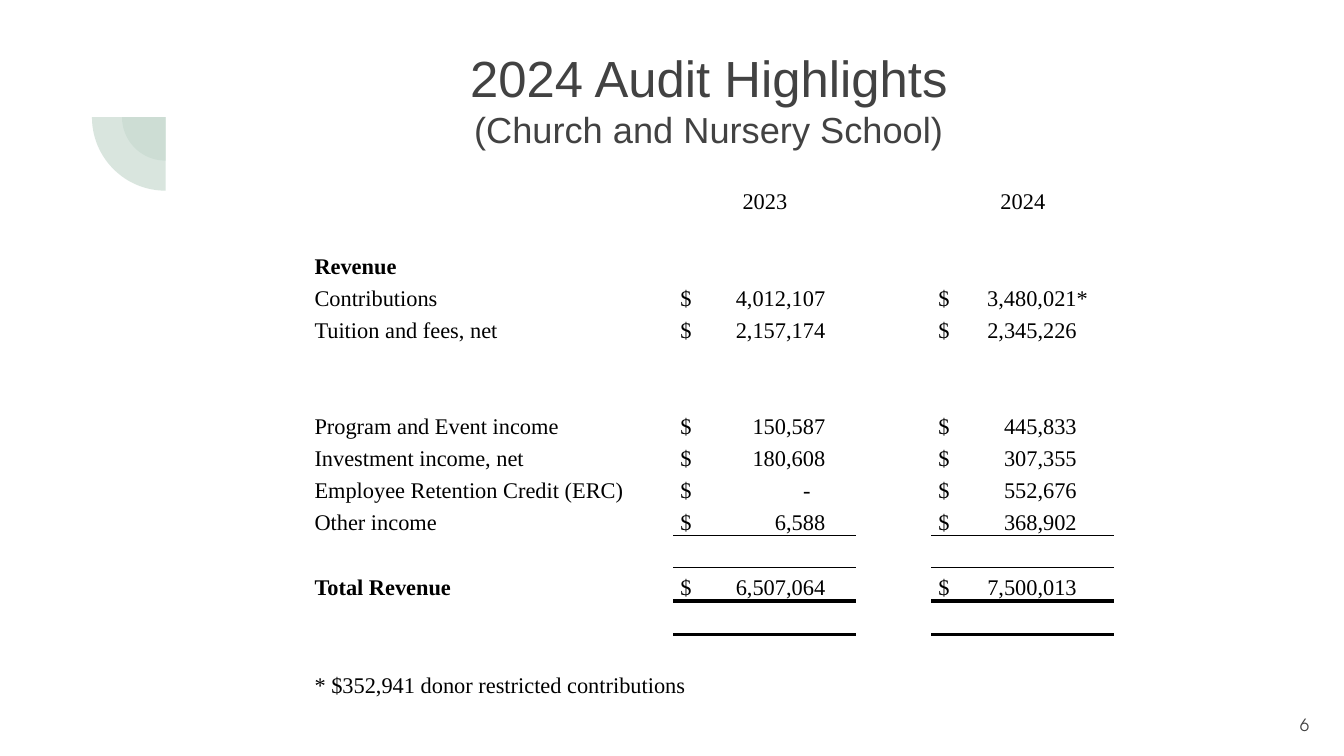
from math import cos, pi, sin

from lxml.etree import SubElement
from pptx import Presentation
from pptx.dml.color import RGBColor
from pptx.enum.text import MSO_ANCHOR, PP_ALIGN
from pptx.oxml import parse_xml
from pptx.oxml.ns import qn
from pptx.util import Pt

COLORS = {"text": "424242", "table": "000000", "accent": "C9DBD1"}
NS = 'xmlns:a="http://schemas.openxmlformats.org/drawingml/2006/main"'
PLAIN_STYLE = "{2D5ABB26-0587-4C30-8999-92F81FD0307C}"  # no style, no grid

COL_WIDTHS = [193, 98, 40.2, 98]
ROW_HEIGHT, TOTAL_HEIGHT = 17.2, 17.9
TAB_STOPS = {1: 77.7, 3: 74.2}  # right edge of the figures, by column
TAB_SHIFT = {"*": 6, "-": -8}  # a note mark hangs out, a dash sits in

# Row number: label, 2023, 2024
AMOUNTS = {
    3: ("Contributions", "4,012,107", "3,480,021*"),
    4: ("Tuition and fees, net", "2,157,174", "2,345,226"),
    7: ("Program and Event income", "150,587", "445,833"),
    8: ("Investment income, net", "180,608", "307,355"),
    9: ("Employee Retention Credit (ERC)", "-", "552,676"),
    10: ("Other income", "6,588", "368,902"),
    12: ("Total Revenue", "6,507,064", "7,500,013"),
}
ROW_COUNT, TOTAL_ROW, NOTE_ROW = 16, 12, 15
RULES = {10: 0.5, 12: 2}  # line width below a row


def rgb(name):
    return RGBColor.from_string(COLORS[name])


def add_run(p, text, font, size, color, bold=False):
    r = p.add_run()
    r.text = text
    r.font.name, r.font.size, r.font.bold = font, Pt(size), bold
    r.font.color.rgb = rgb(color)


def set_margins(tf, size):
    tf.margin_left = tf.margin_right = Pt(size)
    tf.margin_top = tf.margin_bottom = Pt(size)


def add_quarter_disc(s, right, top, radius):
    """Lower left quarter of a disc centred at (right, top)."""
    steps = 40
    angles = [pi / 2 * (1 + i / steps) for i in range(steps + 1)]
    arc = [(right + radius * cos(a), top + radius * sin(a)) for a in angles]
    builder = s.shapes.build_freeform(Pt(right), Pt(top))
    builder.add_line_segments([(Pt(x), Pt(y)) for x, y in arc], close=True)
    sp = builder.convert_to_shape()
    sp.shadow.inherit = False
    sp.line.fill.background()
    sp.fill.solid()
    sp.fill.fore_color.rgb = rgb("accent")
    SubElement(next(sp._element.iter(qn("a:srgbClr"))), qn("a:alpha"), val="70000")


def add_title(s):
    sp = s.shapes.title
    sp.left, sp.top, sp.width, sp.height = Pt(103), Pt(15.8), Pt(553.7), Pt(74.2)
    tf = sp.text_frame
    set_margins(tf, 7.2)
    tf.vertical_anchor = MSO_ANCHOR.MIDDLE
    p = tf.paragraphs[0]
    p.alignment = PP_ALIGN.CENTER
    add_run(p, "2024 Audit Highlights", "Arial", 27.2, "text")
    p.add_line_break()
    add_run(p, "(Church and Nursery School)", "Arial", 19.4, "text")


def write_cell(cell, text, bold=False, align=PP_ALIGN.LEFT):
    p = cell.text_frame.paragraphs[0]
    p.alignment = align
    add_run(p, text, "Times New Roman", 12, "table", bold)


def write_amount(cell, amount, stop):
    cell.margin_left = Pt(3.7)
    stop += TAB_SHIFT.get(amount[-1], 0)
    pPr = cell.text_frame.paragraphs[0]._p.get_or_add_pPr()
    tabs = SubElement(pPr, qn("a:tabLst"))
    SubElement(tabs, qn("a:tab"), pos=str(int(Pt(stop))), algn="r")
    write_cell(cell, "$\t" + amount)


def add_border(cell, side, width):
    cell._tc.get_or_add_tcPr().insert(0, parse_xml(
        f'<a:ln{side} {NS} w="{int(Pt(width))}"><a:solidFill>'
        f'<a:srgbClr val="{COLORS["table"]}"/></a:solidFill></a:ln{side}>'))


def add_revenue_table(s):
    frame = s.shapes.add_table(ROW_COUNT, len(COL_WIDTHS), Pt(167.8), Pt(97.9),
                               Pt(sum(COL_WIDTHS)), Pt(ROW_HEIGHT * ROW_COUNT))
    table = frame.table
    table.first_row = table.horz_banding = False
    next(frame._element.iter(qn("a:tableStyleId"))).text = PLAIN_STYLE
    for col, width in zip(table.columns, COL_WIDTHS):
        col.width = Pt(width)
    for i, row in enumerate(table.rows):
        row.height = Pt(TOTAL_HEIGHT if i in (TOTAL_ROW, TOTAL_ROW + 1) else ROW_HEIGHT)
        for cell in row.cells:
            cell.margin_left = cell.margin_right = cell.margin_top = Pt(0.7)
            cell.margin_bottom = Pt(0)
            cell.vertical_anchor = MSO_ANCHOR.BOTTOM
            cell.fill.background()
            # Keeps blank rows at the height of the text rows
            SubElement(cell.text_frame.paragraphs[0]._p, qn("a:endParaRPr"), sz="1200")

    # Headings and note
    for c, year in zip(TAB_STOPS, ("2023", "2024")):
        write_cell(table.cell(0, c), year, align=PP_ALIGN.CENTER)
    write_cell(table.cell(2, 0), "Revenue", bold=True)
    table.cell(NOTE_ROW, 0).merge(table.cell(NOTE_ROW, 1))
    write_cell(table.cell(NOTE_ROW, 0), "* $352,941 donor restricted contributions")

    # Figures
    for i, (label, *amounts) in AMOUNTS.items():
        write_cell(table.cell(i, 0), label, bold=i == TOTAL_ROW)
        for (c, stop), amount in zip(TAB_STOPS.items(), amounts):
            write_amount(table.cell(i, c), amount, stop)

    # Rules under the last item and the total
    for i, width in RULES.items():
        for c in TAB_STOPS:
            add_border(table.cell(i, c), "B", width)
            add_border(table.cell(i + 1, c), "T", width)


def add_page_number(s, number):
    tf = s.shapes.add_textbox(Pt(683.3), Pt(375.8), Pt(25.2), Pt(25.2)).text_frame
    set_margins(tf, 7.2)
    tf.word_wrap = False
    tf.vertical_anchor = MSO_ANCHOR.MIDDLE
    p = tf.paragraphs[0]
    p.alignment = PP_ALIGN.RIGHT
    add_run(p, number, "TeX Gyre Adventor", 9, "text")


def main():
    prs = Presentation()
    prs.slide_width, prs.slide_height = Pt(720), Pt(405)
    s = prs.slides.add_slide(prs.slide_layouts[5])
    for radius in (23.3, 39.4):
        add_quarter_disc(s, 88.7, 62.8, radius)
    add_title(s)
    add_revenue_table(s)
    add_page_number(s, "6")
    prs.save("out.pptx")


if __name__ == "__main__":
    main()
